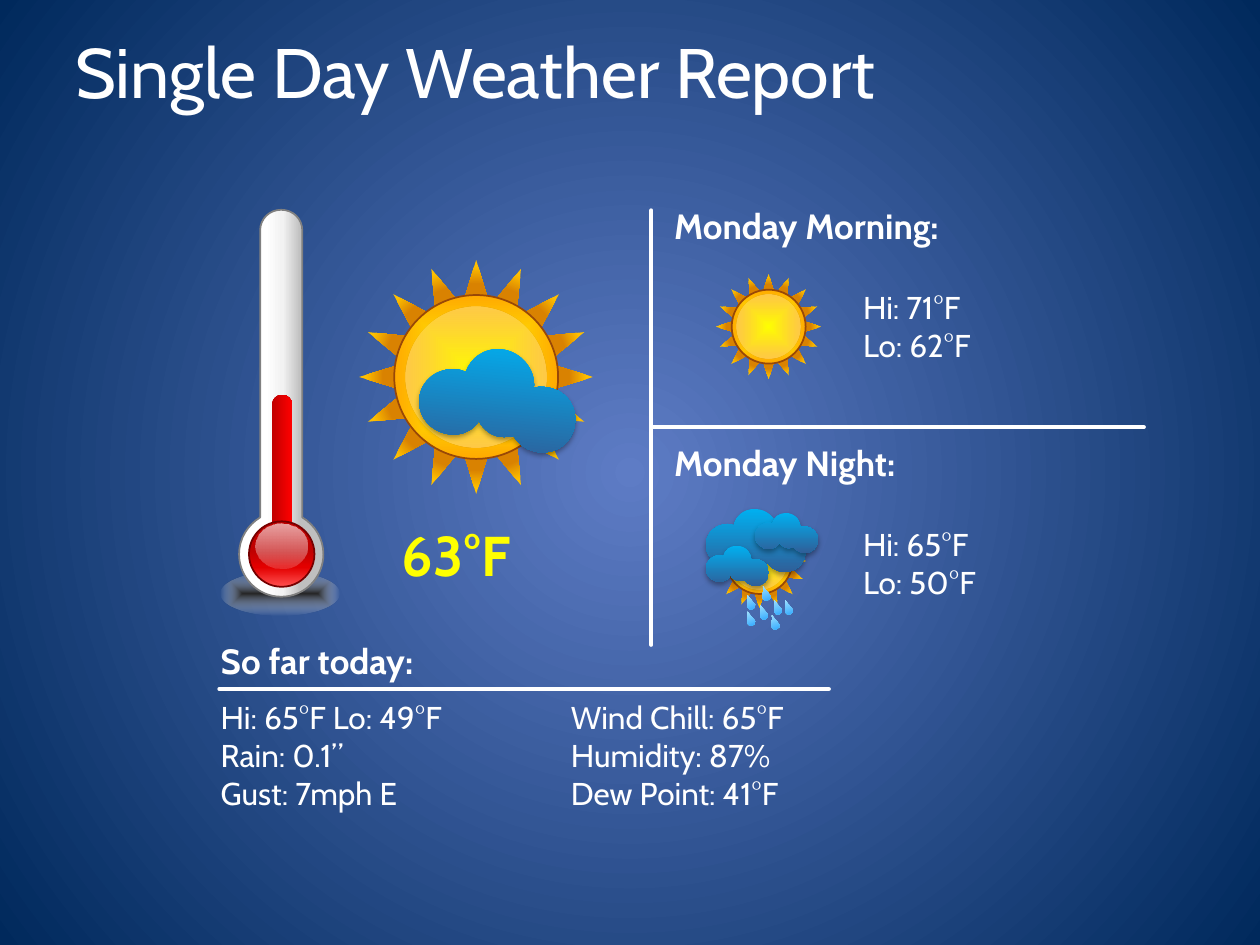
from pptx import Presentation
from pptx.dml.color import RGBColor
from pptx.enum.shapes import MSO_CONNECTOR as Link, MSO_SHAPE as Kind
from pptx.enum.text import MSO_ANCHOR as Anchor, MSO_AUTO_SIZE as Auto, PP_ALIGN as Align
from pptx.oxml import parse_xml
from pptx.oxml.ns import nsdecls, qn
from pptx.util import Cm, Pt

FONT = "Cabin"
WHITE = RGBColor(0xFF, 0xFF, 0xFF)
YELLOW = RGBColor(0xFF, 0xFF, 0x00)
BROWN = RGBColor(0x98, 0x48, 0x07)
GREY = RGBColor(0x80, 0x80, 0x80)
MAROON = RGBColor(0x76, 0x00, 0x00)
BLACK = RGBColor(0x00, 0x00, 0x00)
DUSK, NAVY = RGBColor(0x5E, 0x7C, 0xC5), RGBColor(0x00, 0x29, 0x5C)
OCHRE, GOLD = RGBColor(0xD9, 0x82, 0x01), RGBColor(0xFF, 0xC0, 0x00)
AMBER = RGBColor(0xFF, 0xAA, 0x01)
SKY, STEEL = RGBColor(0x00, 0xB0, 0xF0), RGBColor(0x2F, 0x5F, 0x99)
RAIN, MIST = RGBColor(0x30, 0xA9, 0xFF), RGBColor(0xAE, 0xE9, 0xFF)
COAL = RGBColor(0x26, 0x26, 0x26)
PALE, SILVER = RGBColor(0xF2, 0xF2, 0xF2), RGBColor(0xBF, 0xBF, 0xBF)
RED, DARK = RGBColor(0xFF, 0x00, 0x00), RGBColor(0xC0, 0x00, 0x00)
MID, LIGHT = RGBColor(0xE3, 0x00, 0x00), RGBColor(0xFF, 0x4F, 0x4F)


def mirror(half):
    """Close a right-hand outline with its reflection."""
    return half + [(100 - x, y) for x, y in half[-2::-1]]


# Outlines in percent of their box: a start, then three Bézier points per curve.
CLOUD = [(49, 0), (61, 0), (72, 16), (72, 36), (74, 34), (76, 34), (79, 34),
         (91, 34), (100, 48), (100, 67), (100, 86), (91, 100), (79, 100),
         (72, 100), (65, 94), (62, 86), (59, 87), (57, 88), (54, 88),
         (48, 88), (42, 82), (39, 74), (36, 84), (29, 90), (22, 90),
         (10, 90), (0, 76), (0, 57), (0, 38), (10, 24), (22, 24),
         (24, 24), (26, 25), (28, 26), (30, 12), (38, 0), (49, 0)]
DROP = mirror([(50, 0), (75, 50), (100, 62), (100, 77), (100, 90), (78, 100), (50, 100)])
TUBE = mirror([(50, 0), (64, 0), (75, 2.3), (75, 5.4), (75, 5.4), (75, 79.5), (75, 79.5),
               (90, 81.5), (100, 85), (100, 89), (100, 95), (78, 100), (50, 100)])


def shade(part, stops, turn=None, kind="circle"):
    """Gradient of (position, colour, alpha) stops: linear if turn is given, else radial."""
    marks = "".join(
        f'<a:gs pos="{pos * 1000}"><a:srgbClr val="{tint}">'
        f'<a:alpha val="{alpha * 1000}"/></a:srgbClr></a:gs>'
        for pos, tint, alpha in stops)
    if turn is None:
        way = (f'<a:path path="{kind}"><a:fillToRect l="50000" t="50000" '
               'r="50000" b="50000"/></a:path>')
    else:
        way = f'<a:lin ang="{turn * 60000}" scaled="0"/>'
    part.fill.background()
    return parse_xml(f'<a:gradFill {nsdecls("a")} rotWithShape="1">'
                     f'<a:gsLst>{marks}</a:gsLst>{way}</a:gradFill>')


def swap(root, grad):
    """Put the gradient where the empty fill stands."""
    old = root.find(".//" + qn("a:noFill"))
    old.getparent().replace(old, grad)


def finish(shape, stops, turn=None, kind="shape", edge=None):
    shape.shadow.inherit = False
    swap(shape.element, shade(shape, stops, turn, kind))
    if edge is None:
        shape.line.fill.background()
    else:
        shape.line.color.rgb = edge
        shape.line.width = Pt(1)
    return shape


def preset(group, form, box, *look, **more):
    shape = group.shapes.add_shape(form, *map(Cm, box))
    return finish(shape, *look, **more)


def outline(group, nodes, box, *look, **more):
    x, y, w, h = box
    pts = [(Cm(x + w * px / 100), Cm(y + h * py / 100)) for px, py in nodes]
    pen = group.shapes.build_freeform(*pts[0])
    pen.add_line_segments(pts[1:], close=True)
    shape = pen.convert_to_shape()
    bend(shape, nodes)
    return finish(shape, *look, **more)


def bend(shape, nodes):
    """Join each three straight segments into one curve, or one line if they are flat."""
    legs = list(shape.element.iter(qn("a:lnTo")))
    for i in range(0, len(legs), 3):
        first, second, last = legs[i:i + 3]
        if nodes[i + 2] != nodes[i + 3]:
            curve = parse_xml(f'<a:cubicBezTo {nsdecls("a")}/>')
            last.addprevious(curve)
            for leg in (first, second, last):
                curve.append(leg[0])
            last.getparent().remove(last)
        for leg in (first, second):
            leg.getparent().remove(leg)


def write(slide, box, lines, size, bold=False, tint=WHITE, pad=0.0):
    frame = slide.shapes.add_textbox(*map(Cm, box)).text_frame
    frame.word_wrap = True
    frame.margin_top = frame.margin_bottom = Cm(pad)
    frame.text = "\n".join(lines)
    for para in frame.paragraphs:
        style(para, size, tint, bold)


def style(para, size, tint, bold=False):
    font = para.font
    font.name, font.size, font.bold = FONT, Pt(size), bold
    font.color.rgb = tint


def rule(slide, x1, y1, x2, y2):
    line = slide.shapes.add_connector(Link.STRAIGHT, *map(Cm, (x1, y1, x2, y2)))
    line.line.color.rgb = WHITE
    line.line.width = Pt(2.25)
    line.element.spPr.find(qn("a:ln")).set("cap", "rnd")
    line.element.spPr.append(parse_xml(f'<a:effectLst {nsdecls("a")}/>'))


def sun(group, x, y, side):
    def inset(part):
        gap = side * part
        return x + gap, y + gap, side - 2 * gap, side - 2 * gap

    star = preset(group, Kind.STAR_16_POINT, inset(0),
                  [(56, OCHRE, 100), (67, GOLD, 100)], kind="circle")
    star.adjustments[0] = 0.307
    preset(group, Kind.OVAL, inset(0.15), [(0, YELLOW, 100), (100, AMBER, 100)], edge=BROWN)
    preset(group, Kind.OVAL, inset(0.2), [(0, WHITE, 0), (100, WHITE, 28)])


def cloud(group, x, y, w, h):
    shape = outline(group, CLOUD, (x, y, w, h), [(0, SKY, 100), (100, STEEL, 100)], 90)
    shape.element.spPr.find(qn("a:effectLst")).append(parse_xml(
        f'<a:outerShdw {nsdecls("a")} blurRad="{Pt(3.1)}" dist="{Pt(1.8)}" dir="5400000">'
        f'<a:srgbClr val="{BLACK}"><a:alpha val="35000"/></a:srgbClr></a:outerShdw>'))
    return shape


def gauge(slide, x, y):
    """Thermometer on its soft ground shadow."""
    group = slide.shapes.add_group_shape()
    preset(group, Kind.OVAL, (x, y + 7.29, 2.39, 0.89), [(0, COAL, 100), (100, WHITE, 0)])
    outline(group, TUBE, (x + 0.37, y, 1.7, 7.8),
            [(31, WHITE, 100), (52, PALE, 100), (73, SILVER, 100)], 0, edge=GREY)
    bar = preset(group, Kind.ROUNDED_RECTANGLE, (x + 1.03, y + 3.73, 0.41, 3.4),
                 [(0, DARK, 100), (100, RED, 100)], 0)
    bar.adjustments[0] = 0.5
    preset(group, Kind.OVAL, (x + 0.57, y + 6.28, 1.32, 1.32),
           [(46, DARK, 100), (70, MID, 100), (100, LIGHT, 100)], 90, edge=MAROON)
    preset(group, Kind.OVAL, (x + 0.7, y + 6.33, 1.04, 0.91),
           [(0, WHITE, 65), (100, WHITE, 15)], 90)


def cloudy(slide, x, y):
    group = slide.shapes.add_group_shape()
    sun(group, x, y, 4.72)
    cloud(group, x + 1.22, y + 1.8, 3.17, 2).rotation = 5.1


def clear(slide, x, y):
    sun(slide.shapes.add_group_shape(), x + 0.2, y + 0.03, 2.13)


def rainy(slide, x, y):
    group = slide.shapes.add_group_shape()
    sun(group, x + 0.13, y + 0.1, 1.9)
    for dx, dy, w, h in [(0, 0, 2.01, 1.27), (0.99, 0.08, 1.27, 0.81), (0, 0.74, 1.27, 0.81)]:
        cloud(group, x + dx, y + dy, w, h)
    for dx, dy in [(1.07, 1.93), (1.3, 2.13), (1.35, 1.83), (0.81, 2.06),
                   (1.57, 1.83), (0.81, 1.73), (1.12, 1.55)]:
        drop = outline(group, DROP, (x + dx, y + dy, 0.16, 0.3),
                       [(0, MIST, 100), (100, RAIN, 100)], 90)
        drop.rotation = 341.3


def outlook(slide, x, y, head, icon, temps):
    write(slide, (x, y, 6.78, 1.07), [head], 20, True)
    icon(slide, x + 0.89, y + 1.36)
    write(slide, (x + 3.81, y + 1.55, 2.97, 1.8), temps, 18, pad=0.13)


def today(slide, x, y, left, right):
    write(slide, (x, y, 10.41, 1.07), ["So far today:"], 20, True)
    rule(slide, x + 0.22, y + 0.99, x + 12.51, y + 0.99)
    for dx, lines in ((0, left), (7.06, right)):
        write(slide, (x + dx, y + 1.18, 6.5, 2.44), lines, 18)


def heading(slide, box, text):
    title = slide.shapes.title
    title.left, title.top, title.width, title.height = map(Cm, box)
    frame = title.text_frame
    frame.text = text
    frame.auto_size = Auto.NONE
    frame.vertical_anchor = Anchor.MIDDLE
    frame.paragraphs[0].alignment = Align.LEFT
    style(frame.paragraphs[0], 40, WHITE)


def main():
    deck = Presentation()
    deck.slide_width, deck.slide_height = Cm(25.4), Cm(19.05)
    slide = deck.slides.add_slide(deck.slide_layouts[5])
    swap(slide.element, shade(slide.background, [(0, DUSK, 100), (100, NAVY, 100)]))
    heading(slide, (1.27, 0.21, 22.86, 2.41), "Single Day Weather Report")
    cloudy(slide, 7.24, 5.24)
    gauge(slide, 4.45, 4.23)
    write(slide, (7.85, 10.36, 3.17, 1.63), ["63°F"], 32, True, YELLOW, 0.13)
    today(slide, 4.2, 12.9, ["Hi: 65°F Lo: 49°F", "Rain: 0.1”", "Gust: 7mph E"],
          ["Wind Chill: 65°F", "Humidity: 87%", "Dew Point: 41°F"])
    rule(slide, 13.13, 4.24, 13.13, 13)
    rule(slide, 13.13, 8.61, 23.06, 8.61)
    outlook(slide, 13.34, 4.13, "Monday Morning:", clear, ["Hi: 71°F", "Lo: 62°F"])
    outlook(slide, 13.34, 8.9, "Monday Night:", rainy, ["Hi: 65°F", "Lo: 50°F"])
    deck.save("out.pptx")


if __name__ == "__main__":
    main()
